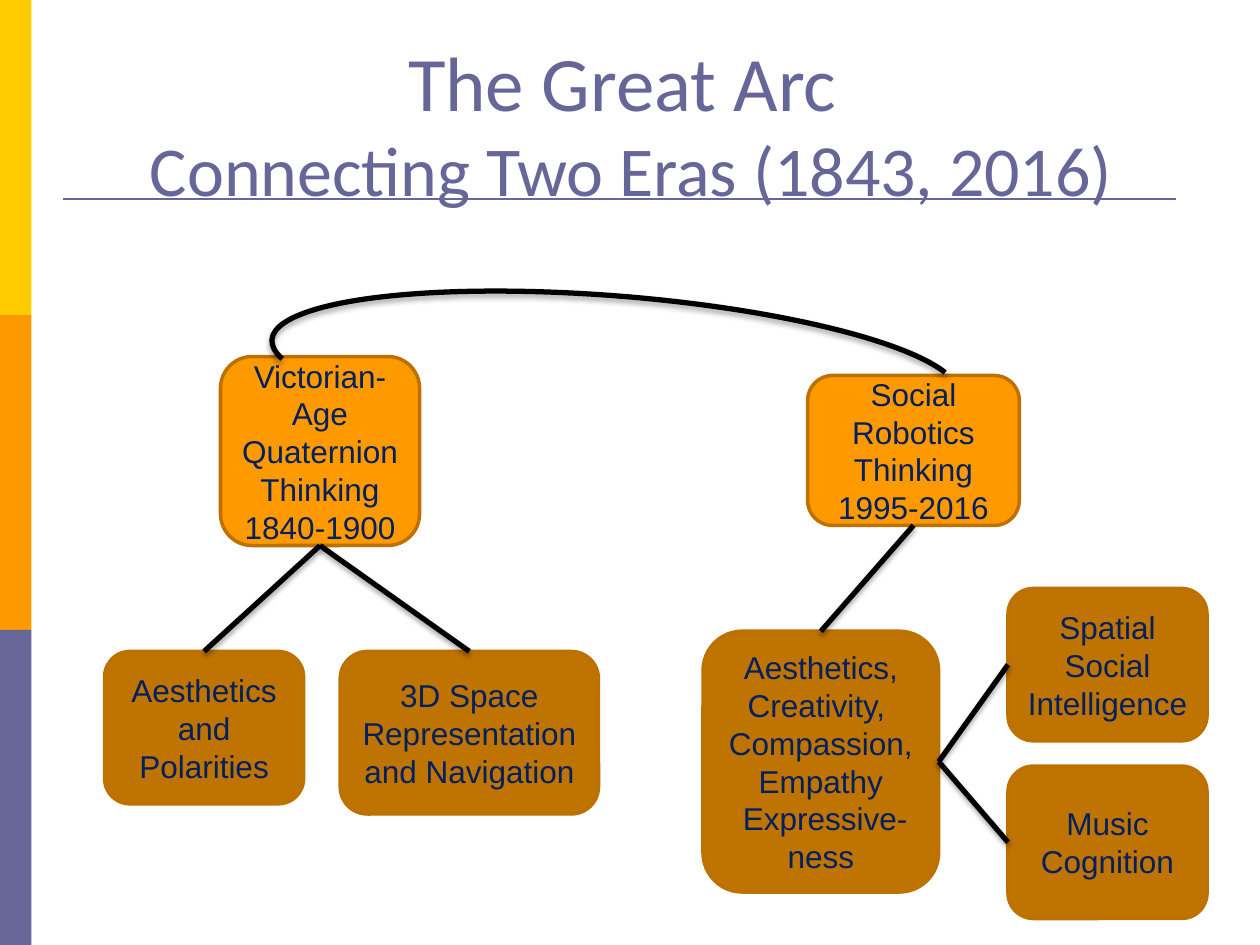
from lxml.etree import SubElement
from pptx import Presentation
from pptx.dml.color import RGBColor
from pptx.enum.shapes import MSO_CONNECTOR, MSO_SHAPE
from pptx.enum.text import MSO_ANCHOR, PP_ALIGN
from pptx.oxml.ns import qn
from pptx.util import Inches, Pt

COLORS = {
    "yellow": "FFCC00", "orange": "FF9900", "violet": "666699",
    "brown": "BF7300", "edge": "BD7100", "navy": "002060", "black": "000000",
}
SIDEBAR = ["yellow", "orange", "violet"]
TITLE = [("The Great Arc ", 44), ("Connecting Two Eras (1843, 2016)", 40)]
BOXES = {
    "victorian": ((1.75, 2.83, 1.58, 1.5), "orange",
                  [["Victorian-Age", "Quaternion Thinking", "1840-1900"]]),
    "robotics": ((6.41, 2.98, 1.68, 1.19), "orange",
                 [["Social Robotics Thinking", "1995-2016"]]),
    "polarities": ((0.83, 5.17, 1.58, 1.21), "brown", [["Aesthetics and Polarities"]]),
    "space": ((2.7, 5.17, 2.05, 1.29), "brown",
              [["3D Space Representation and Navigation"]]),
    "empathy": ((5.58, 5.01, 1.87, 2.07), "brown",
                [["Aesthetics, Creativity, "], ["Compassion, Empathy"], [" Expressive-ness"]]),
    "spatial": ((8, 4.67, 1.58, 1.21), "brown", [["Spatial Social Intelligence"]]),
    "music": ((8, 6.08, 1.58, 1.21), "brown", [["Music Cognition"]]),
}
SITES = {"top": 0, "left": 1, "bottom": 2, "right": 3}
LINKS = [
    ("robotics", "bottom", "empathy", "top"),
    ("victorian", "bottom", "polarities", "top"),
    ("space", "top", "victorian", "bottom"),
    ("spatial", "left", "empathy", "right"),
    ("music", "left", "empathy", "right"),
]


def color(name):
    """Return the named colour."""
    return RGBColor.from_string(COLORS[name])


def add_lines(paragraph, lines, font_name, font_color):
    """Add (text, size) runs with line breaks between them."""
    paragraph.alignment = PP_ALIGN.CENTER
    for index, (text, size) in enumerate(lines):
        if index:
            paragraph.add_line_break()
        run = paragraph.add_run()
        run.text = text
        run.font.size = Pt(size)
        run.font.name = font_name
        run.font.color.rgb = color(font_color)


def set_line(shape, name, width):
    """Set the line colour and width."""
    shape.line.color.rgb = color(name)
    shape.line.width = Pt(width)


def add_filled(slide, preset, box, fill):
    """Add a shape with a solid fill and no shadow."""
    shape = slide.shapes.add_shape(preset, *map(Inches, box))
    shape.shadow.inherit = False
    shape.fill.solid()
    shape.fill.fore_color.rgb = color(fill)
    return shape


def set_shadow(shape):
    """Give a line a soft shadow below it."""
    effects = SubElement(shape._element.spPr, qn("a:effectLst"))
    shadow = SubElement(effects, qn("a:outerShdw"), blurRad=str(Pt(3.1)),
                        dist=str(Pt(1.8)), dir="5400000", rotWithShape="0")
    tint = SubElement(shadow, qn("a:srgbClr"), val=COLORS["black"])
    SubElement(tint, qn("a:alpha"), val="35000")


def add_title(slide):
    """Fill the title placeholder and draw the rule under it."""
    title = slide.shapes.title
    title.left, title.top, title.width, title.height = map(Inches, (0.7, 1.24, 8.62, 1.09))
    frame = title.text_frame
    frame.word_wrap = True
    frame.vertical_anchor = MSO_ANCHOR.BOTTOM
    frame.margin_bottom = Inches(0.66)
    add_lines(frame.paragraphs[0], TITLE, "Calibri", "violet")
    rule = slide.shapes.add_connector(
        MSO_CONNECTOR.STRAIGHT, *map(Inches, (0.5, 1.58, 9.33, 1.58)))
    set_line(rule, "violet", 1.5)
    SubElement(rule._element.spPr, qn("a:effectLst"))


def add_box(slide, box, fill, paragraphs):
    """Add a rounded box with centred text."""
    shape = add_filled(slide, MSO_SHAPE.ROUNDED_RECTANGLE, box, fill)
    set_line(shape, "edge", 2)
    frame = shape.text_frame
    frame.word_wrap = True
    frame.vertical_anchor = MSO_ANCHOR.MIDDLE
    for index, lines in enumerate(paragraphs):
        paragraph = frame.add_paragraph() if index else frame.paragraphs[0]
        add_lines(paragraph, [(line, 18) for line in lines], "Arial", "navy")
    return shape


def add_arc(slide):
    """Add the arc that joins the two eras."""
    arc = slide.shapes.add_shape(MSO_SHAPE.ARC, *map(Inches, (2.15, 2.35, 5.47, 1.13)))
    arc.adjustments[0] = 106.1
    arc.adjustments[1] = 213.79
    arc.rotation = 4.6
    arc.fill.background()
    set_line(arc, "black", 3)
    set_shadow(arc)


def main():
    """Build the slide."""
    presentation = Presentation()
    presentation.slide_width, presentation.slide_height = Inches(10), Inches(7.5)
    slide = presentation.slides.add_slide(presentation.slide_layouts[5])
    for index, name in enumerate(SIDEBAR):
        band = add_filled(slide, MSO_SHAPE.RECTANGLE, (0, 2.5 * index, 0.25, 2.5), name)
        band.line.fill.background()
    add_title(slide)
    boxes = {name: add_box(slide, *content) for name, content in BOXES.items()}
    add_arc(slide)
    for start, start_site, end, end_site in LINKS:
        link = slide.shapes.add_connector(MSO_CONNECTOR.STRAIGHT, 0, 0, 0, 0)
        link.begin_connect(boxes[start], SITES[start_site])
        link.end_connect(boxes[end], SITES[end_site])
        set_line(link, "black", 3)
        set_shadow(link)
    presentation.save("out.pptx")


if __name__ == "__main__":
    main()
